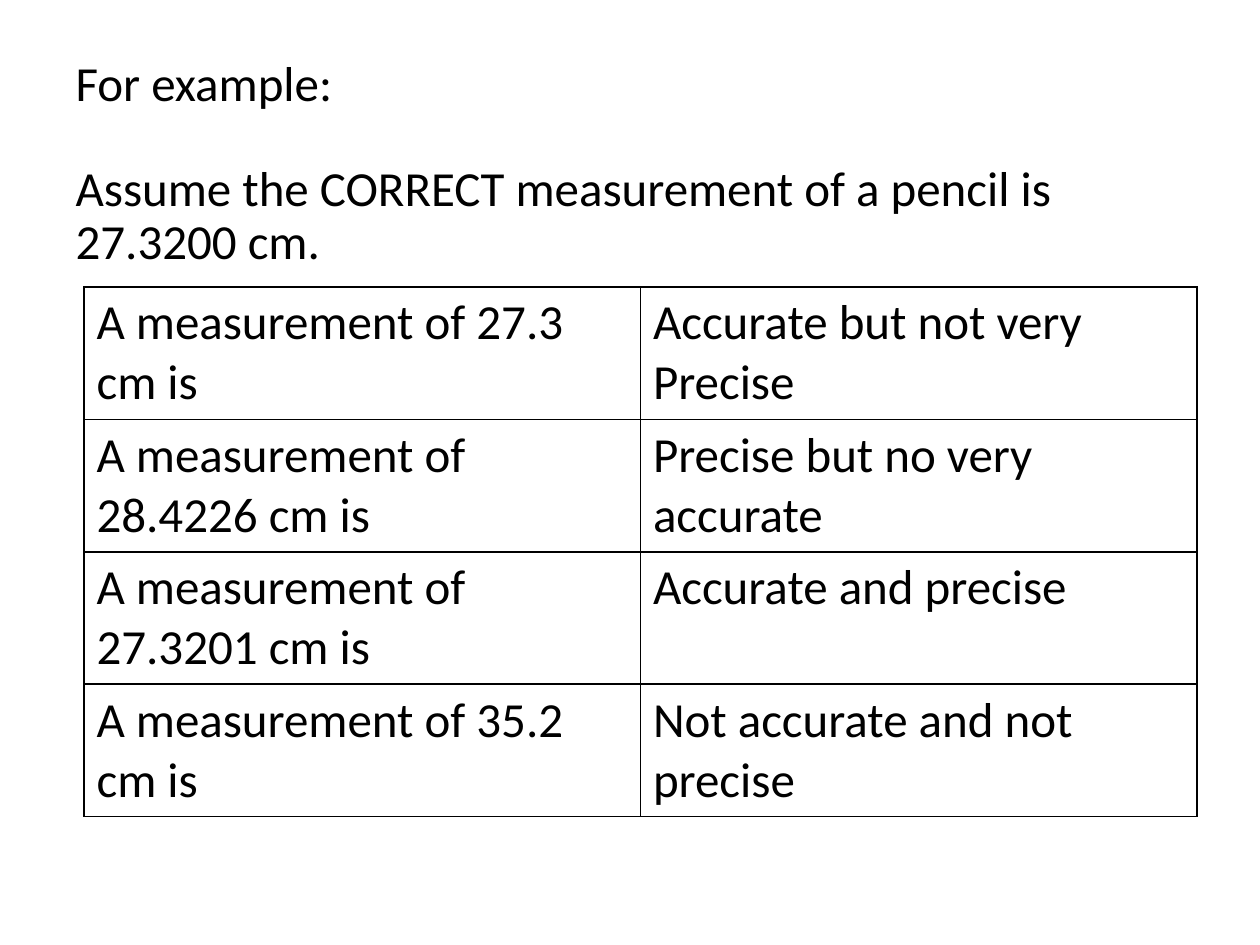
from dataclasses import dataclass

from lxml import etree
from pptx import Presentation
from pptx.dml.color import RGBColor
from pptx.enum.text import MSO_ANCHOR, PP_ALIGN
from pptx.oxml.ns import qn
from pptx.util import Pt

LEFT = PP_ALIGN.LEFT
MIDDLE = MSO_ANCHOR.MIDDLE
TOP = MSO_ANCHOR.TOP
TITLE_ONLY = 5
BLACK = "000000"
BORDER_WIDTH = 1
TITLE_LINES = (
    "For example:",
    "Assume the CORRECT measurement of a pencil is 27.3200 cm.",
)
TITLE_BOUNDS = {"left": 36, "top": 24, "width": 648, "height": 140}
TABLE_LEFT, TABLE_TOP = 48, 164
COLUMN_WIDTH, ROW_HEIGHT = 318, 75.6
FONT_FORMAT = {"name": "Calibri", "size": Pt(28), "bold": False}


@dataclass(frozen=True)
class Measurement:
    value: str
    verdict: str


MEASUREMENTS = (
    Measurement("27.3", "Accurate but not very Precise"),
    Measurement("28.4226", "Precise but no very accurate"),
    Measurement("27.3201", "Accurate and precise"),
    Measurement("35.2", "Not accurate and not precise"),
)


def color(value: str) -> RGBColor:
    return RGBColor.from_string(value)


def write(para, text: str) -> None:
    para.alignment = LEFT
    span = para.add_run()
    span.text = text
    for name, value in FONT_FORMAT.items():
        setattr(span.font, name, value)
    span.font.color.rgb = color(BLACK)


def add_borders(cell) -> None:
    properties = cell._tc.get_or_add_tcPr()
    for side in ("lnL", "lnR", "lnT", "lnB"):
        line = etree.SubElement(properties, qn(f"a:{side}"), w=str(Pt(BORDER_WIDTH)))
        fill = etree.SubElement(line, qn("a:solidFill"))
        etree.SubElement(fill, qn("a:srgbClr"), val=BLACK)


def draw_title(page) -> None:
    title = page.shapes.title
    for name, value in TITLE_BOUNDS.items():
        setattr(title, name, Pt(value))
    frame = title.text_frame
    frame.word_wrap = True
    frame.vertical_anchor = MIDDLE
    for index, text in enumerate(TITLE_LINES):
        para = frame.add_paragraph() if index else frame.paragraphs[0]
        para.line_spacing = 0.9
        para.space_before = Pt(30 if index else 0)
        write(para, text)


def draw_table(page, measurements: tuple[Measurement, ...]) -> None:
    count = len(measurements)
    table = page.shapes.add_table(
        count, 2, Pt(TABLE_LEFT), Pt(TABLE_TOP),
        Pt(2 * COLUMN_WIDTH), Pt(count * ROW_HEIGHT),
    ).table
    table.first_row = False
    table.horz_banding = False
    for column in table.columns:
        column.width = Pt(COLUMN_WIDTH)
    for row, measurement in zip(table.rows, measurements):
        row.height = Pt(ROW_HEIGHT)
        texts = (f"A measurement of {measurement.value} cm is", measurement.verdict)
        for cell, text in zip(row.cells, texts):
            add_borders(cell)
            cell.fill.background()
            cell.vertical_anchor = TOP
            write(cell.text_frame.paragraphs[0], text)


def main() -> None:
    deck = Presentation()
    deck.slide_width, deck.slide_height = Pt(720), Pt(540)
    page = deck.slides.add_slide(deck.slide_layouts[TITLE_ONLY])
    draw_title(page)
    draw_table(page, MEASUREMENTS)
    deck.save("out.pptx")


if __name__ == "__main__":
    main()
